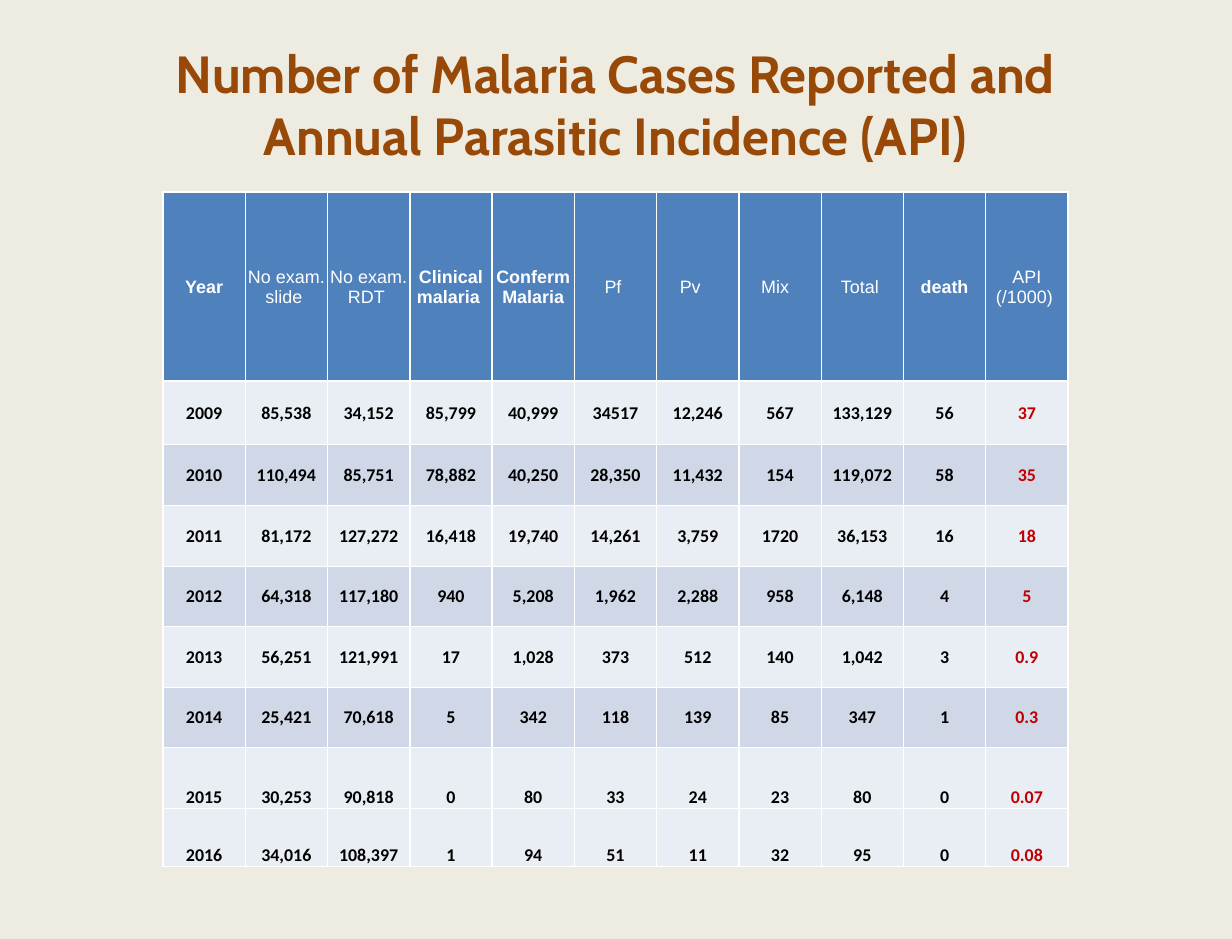
from lxml import etree
from pptx import Presentation
from pptx import util as u
from pptx.dml.color import RGBColor
from pptx.enum import text
from pptx.oxml.ns import qn

PX = 7795  # EMU per px
SLIDE_W, SLIDE_H = 1232, 938

BACKGROUND = RGBColor(0xEE, 0xEC, 0xE1)
BROWN = RGBColor(0x98, 0x48, 0x07)
BLUE = RGBColor(0x4F, 0x81, 0xBD)
LIGHT = RGBColor(0xE9, 0xED, 0xF4)
SHADED = RGBColor(0xD0, 0xD8, 0xE8)
WHITE = RGBColor(0xFF, 0xFF, 0xFF)
BLACK = RGBColor(0, 0, 0)
RED = RGBColor(0xC0, 0, 0)

TITLE = "Number of Malaria Cases Reported and Annual Parasitic Incidence (API)"
# heading, bold, extra right inset in px
HEADINGS = [
    ("Year", True, 0), ("No exam. slide ", False, 0), ("No exam. RDT ", False, 0),
    ("Clinical malaria ", True, 0), ("Conferm Malaria", True, 0),
    ("Pf ", False, 0), ("Pv ", False, 10), ("Mix ", False, 5),
    ("Total ", False, 0), ("death", True, 0), ("API (/1000) ", False, 0),
]
CASES = [
    ("2009", "85,538", "34,152", "85,799", "40,999", "34517", "12,246", "567", "133,129", "56", "37"),
    ("2010", "110,494", "85,751", "78,882", "40,250", "28,350", "11,432", "154", "119,072", "58", "35"),
    ("2011", "81,172", "127,272", "16,418", "19,740", "14,261", "3,759", "1720", "36,153", "16", "18"),
    ("2012", "64,318", "117,180", "940", "5,208", "1,962", "2,288", "958", "6,148", "4", "5"),
    ("2013", "56,251", "121,991", "17", "1,028", "373", "512", "140", "1,042", "3", "0.9"),
    ("2014", "25,421", "70,618", "5", "342", "118", "139", "85", "347", "1", "0.3"),
    ("2015", "30,253", "90,818", "0", "80", "33", "24", "23", "80", "0", "0.07"),
    ("2016", "34,016", "108,397", "1", "94", "51", "11", "32", "95", "0", "0.08"),
]
ROW_HEIGHTS = [189, 63, 61, 61, 60, 61, 60, 61, 58]
TABLE_X, TABLE_Y, TABLE_W = 163, 192, 905
BOTTOM_YEARS = ("2015", "2016")  # rows whose text sits on the lower edge


def add_borders(cell):
    tc_pr = cell._tc.get_or_add_tcPr()
    for side in ("a:lnL", "a:lnR", "a:lnT", "a:lnB"):
        ln = etree.SubElement(tc_pr, qn(side), w=str(u.Pt(1)))
        fill = etree.SubElement(ln, qn("a:solidFill"))
        etree.SubElement(fill, qn("a:srgbClr"), val=str(WHITE))


def fill_cell(cell, words, fill, color, font, bold, anchor, extra=0):
    add_borders(cell)
    cell.fill.solid()
    cell.fill.fore_color.rgb = fill
    cell.margin_left = cell.margin_top = PX
    cell.margin_right = (1 + extra) * PX
    cell.margin_bottom = 0
    cell.vertical_anchor = anchor
    p = cell.text_frame.paragraphs[0]
    p.text = words
    p.alignment = text.PP_ALIGN.CENTER
    p.font.size = u.Pt(11)
    p.font.name = font
    p.font.bold = bold
    p.font.color.rgb = color


def add_title(slide):
    title = slide.shapes.title
    title.left, title.top, title.width, title.height = (n * PX for n in (154, 35, 923, 138))
    tf = title.text_frame
    tf.text = TITLE
    tf.word_wrap = True
    tf.auto_size = text.MSO_AUTO_SIZE.NONE
    tf.vertical_anchor = text.MSO_ANCHOR.TOP
    p = tf.paragraphs[0]
    p.alignment = text.PP_ALIGN.CENTER
    p.font.size = u.Pt(32)
    p.font.name = "Cabin"
    p.font.bold = True
    p.font.color.rgb = BROWN


def add_case_table(slide):
    table = slide.shapes.add_table(
        len(ROW_HEIGHTS), len(HEADINGS), TABLE_X * PX, TABLE_Y * PX,
        TABLE_W * PX, sum(ROW_HEIGHTS) * PX).table
    for column in table.columns:
        column.width = TABLE_W * PX // len(HEADINGS)
    for row, height in zip(table.rows, ROW_HEIGHTS):
        row.height = height * PX

    middle, bottom = text.MSO_ANCHOR.MIDDLE, text.MSO_ANCHOR.BOTTOM
    for c, (heading, bold, extra) in enumerate(HEADINGS):
        fill_cell(table.cell(0, c), heading, BLUE, WHITE, "Arial", bold, middle, extra)
    for r, values in enumerate(CASES, 1):
        at_bottom = values[0] in BOTTOM_YEARS
        fill = LIGHT if r % 2 or at_bottom else SHADED
        for c, value in enumerate(values):
            color = RED if c == len(HEADINGS) - 1 else BLACK
            fill_cell(table.cell(r, c), value, fill, color, "Calibri", True,
                      bottom if at_bottom else middle)


def main():
    prs = Presentation()
    prs.slide_width, prs.slide_height = u.Inches(10.5), u.Inches(8)
    slide = prs.slides.add_slide(prs.slide_layouts[5])
    slide.background.fill.solid()
    slide.background.fill.fore_color.rgb = BACKGROUND
    add_case_table(slide)
    add_title(slide)
    prs.save("out.pptx")


if __name__ == "__main__":
    main()
